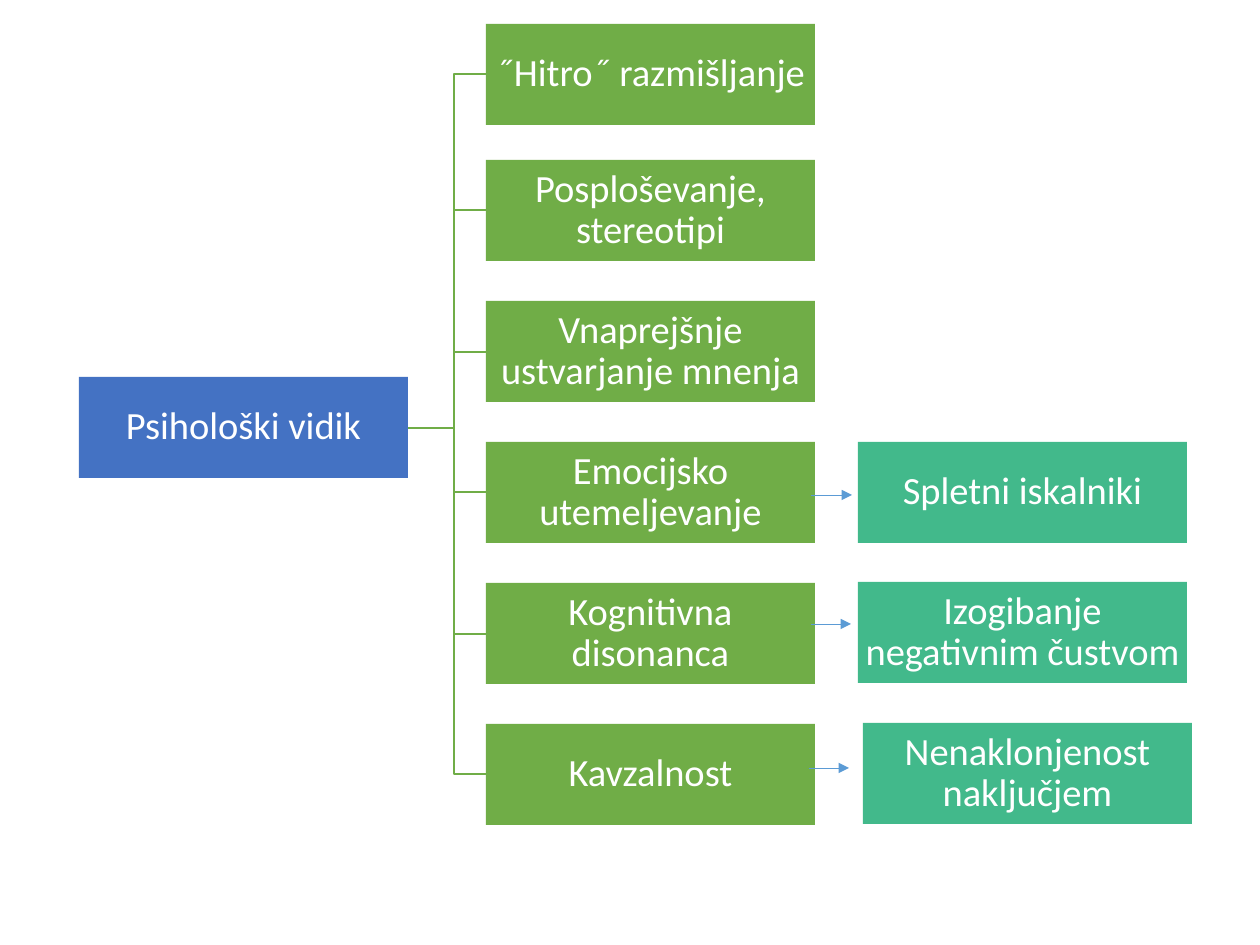
from lxml import etree
from pptx import Presentation
from pptx.dml.color import RGBColor
from pptx.enum.shapes import MSO_CONNECTOR, MSO_SHAPE
from pptx.enum.text import MSO_ANCHOR, PP_ALIGN
from pptx.oxml.ns import qn
from pptx.util import Emu, Pt

RECTANGLE = MSO_SHAPE.RECTANGLE
STRAIGHT = MSO_CONNECTOR.STRAIGHT
MIDDLE = MSO_ANCHOR.MIDDLE
CENTER = PP_ALIGN.CENTER

BLUE = RGBColor(0x44, 0x72, 0xC3)
GREEN = RGBColor(0x70, 0xAD, 0x47)
TEAL = RGBColor(0x42, 0xB9, 0x8B)
ARROW_BLUE = RGBColor(0x5B, 0x9B, 0xD5)
WHITE = RGBColor(0xFF, 0xFF, 0xFF)

EMU_PER_PX = 914400 / 126
BOX_W, BOX_H = 329, 101
ROOT_LEFT, ROOT_TOP = 79, 377
BRANCH_LEFT, TRUNK_X = 486, 454
BRANCH_PITCH = 141


def px(length):
    return Emu(round(length * EMU_PER_PX))


def add_box(text, *, left, top, fill, size=22, color=WHITE, font="Calibri"):
    box = slide.shapes.add_shape(RECTANGLE, px(left), px(top), px(BOX_W), px(BOX_H))
    box.shadow.inherit = False
    box.fill.solid()
    box.fill.fore_color.rgb = fill
    box.line.fill.background()
    frame = box.text_frame
    frame.word_wrap = True
    frame.vertical_anchor = MIDDLE
    frame.margin_left = frame.margin_right = px(2)
    frame.margin_top = frame.margin_bottom = px(2)
    paragraph = frame.paragraphs[0]
    paragraph.alignment = CENTER
    paragraph.line_spacing = 0.9
    run = paragraph.add_run()
    run.text = text
    run.font.name = font
    run.font.size = Pt(size)
    run.font.color.rgb = color


prs = Presentation()
prs.slide_width, prs.slide_height = px(1260), px(945)
slide = prs.slides.add_slide(prs.slide_layouts[6])

# Branches: the first stands apart, the others are evenly spaced
branches = [
    ("˝Hitro˝ razmišljanje", 24),
    *((text, 160 + BRANCH_PITCH * row) for row, text in enumerate([
        "Posploševanje, stereotipi",
        "Vnaprejšnje ustvarjanje mnenja",
        "Emocijsko utemeljevanje",
        "Kognitivna disonanca",
        "Kavzalnost",
    ])),
]

# Elbow lines from the root to each branch
root_right, root_middle = ROOT_LEFT + BOX_W, ROOT_TOP + BOX_H / 2
for _, top in reversed(branches):
    branch_middle = top + BOX_H / 2
    elbow_builder = slide.shapes.build_freeform(root_right, root_middle, scale=EMU_PER_PX)
    elbow_builder.add_line_segments(
        [(TRUNK_X, root_middle), (TRUNK_X, branch_middle), (BRANCH_LEFT, branch_middle)],
        close=False,
    )
    elbow = elbow_builder.convert_to_shape()
    elbow.shadow.inherit = False
    elbow.fill.background()
    elbow.line.color.rgb = GREEN
    elbow.line.width = Pt(1)

# Root and branch boxes
add_box("Psihološki vidik", left=ROOT_LEFT, top=ROOT_TOP, fill=BLUE)
for text, top in branches:
    add_box(text, left=BRANCH_LEFT, top=top, fill=GREEN)

# Consequences
for text, left, top in [
    ("Spletni iskalniki", 858, 442),
    ("Izogibanje negativnim čustvom", 858, 582),
    ("Nenaklonjenost naključjem", 863, 723),
]:
    add_box(text, left=left, top=top, fill=TEAL)

# Arrows from branches to consequences
for start, end, y in [(811, 852, 495), (811, 851, 624), (809, 849, 768)]:
    arrow = slide.shapes.add_connector(STRAIGHT, px(start), px(y), px(end), px(y))
    arrow.line.color.rgb = ARROW_BLUE
    arrow.line.width = Pt(0.5)
    etree.SubElement(arrow.line._get_or_add_ln(), qn("a:tailEnd"), type="triangle")
    etree.SubElement(arrow._element.spPr, qn("a:effectLst"))

prs.save("out.pptx")
